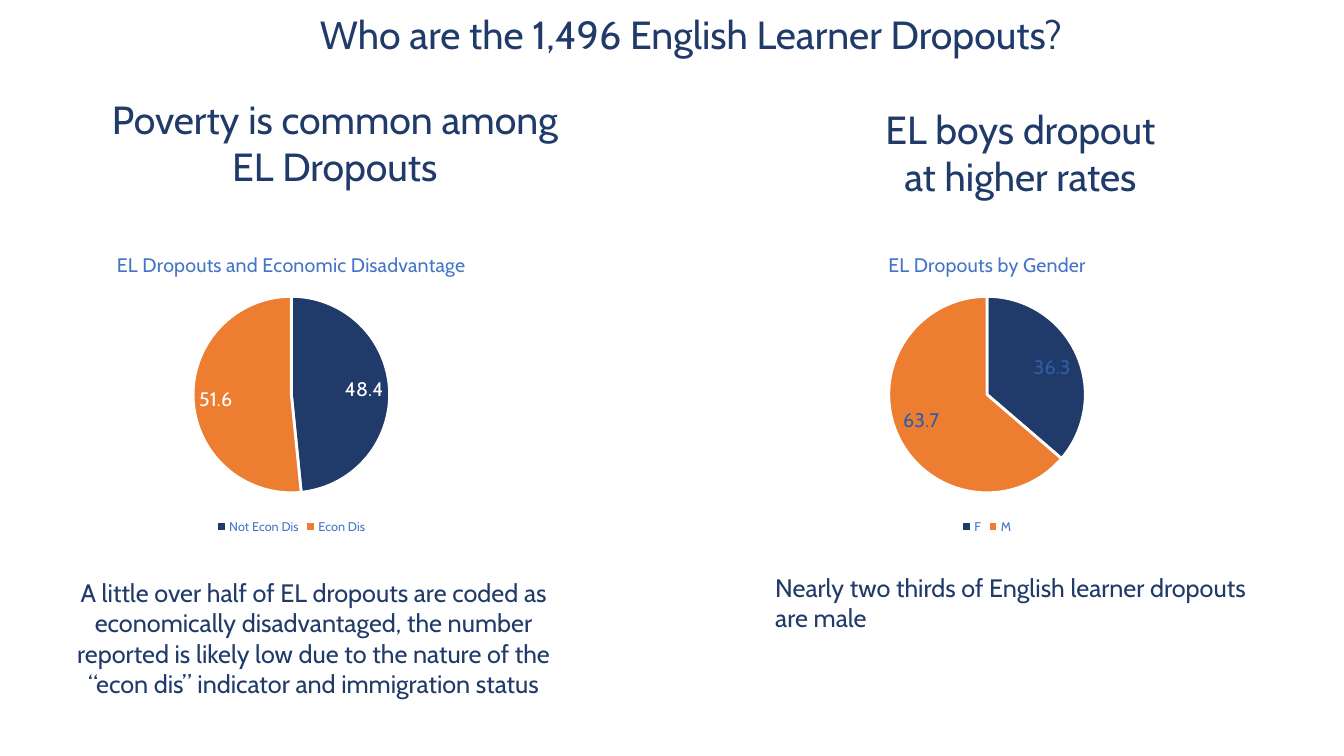
"""Build a slide on English learner dropouts with two captioned pie charts."""
from dataclasses import dataclass

import lxml.etree
import pptx
import pptx.chart.data
import pptx.dml.color
import pptx.enum.chart
import pptx.enum.text
import pptx.oxml.ns
import pptx.util

FONT = "Cabin"
COLORS = {"navy": "203B6A", "orange": "ED7D31", "blue": "4575C7",
          "deep_blue": "2F5DA8", "white": "FFFFFF"}
CENTER = pptx.enum.text.PP_ALIGN.CENTER
LEFT = pptx.enum.text.PP_ALIGN.LEFT


@dataclass
class Passage:
    text: str
    left: float
    top: float
    width: float
    height: float
    size: int
    align: pptx.enum.text.PP_ALIGN = CENTER


@dataclass
class Pie:
    title: str
    left: float
    shares: dict[str, float]
    label_color: str


PASSAGES = [
    Passage("Who are the 1,496 English Learner Dropouts?", 0.99, 0.05, 11.72, 0.57, 28),
    Passage("Poverty is common among EL Dropouts", 0.99, 0.9, 4.66, 1.04, 28),
    Passage("EL boys dropout\nat higher rates", 7.2, 1, 5.84, 1.04, 28),
    Passage("A little over half of EL dropouts are coded as economically "
            "disadvantaged, the number reported is likely low due to the nature of "
            "the “econ dis” indicator and immigration status",
            0.39, 5.68, 5.44, 1.31, 18),
    Passage("Nearly two thirds of English learner dropouts are male",
            7.59, 5.63, 5.05, 0.71, 18, LEFT),
]
PIES = [
    Pie("EL Dropouts and Economic Disadvantage", 0.39,
        {"Not Econ Dis": 48.4, "Econ Dis": 51.6}, "white"),
    Pie("EL Dropouts by Gender", 7.29, {"F": 36.3, "M": 63.7}, "deep_blue"),
]


def rgb(name: str) -> pptx.dml.color.RGBColor:
    """Return the named colour."""
    return pptx.dml.color.RGBColor.from_string(COLORS[name])


def style_font(font, size: int, color: str) -> None:
    """Apply the slide typeface with a size and colour."""
    font.name = FONT
    font.size = pptx.util.Pt(size)
    font.bold = False
    font.color.rgb = rgb(color)


def add_passage(slide, passage: Passage) -> None:
    """Add a wrapped text box."""
    box = slide.shapes.add_textbox(*map(pptx.util.Inches, (
        passage.left, passage.top, passage.width, passage.height)))
    frame = box.text_frame
    frame.word_wrap = True
    frame.text = passage.text
    for paragraph in frame.paragraphs:
        paragraph.alignment = passage.align
        for run in paragraph.runs:
            style_font(run.font, passage.size, "navy")


def place_plot(chart) -> None:
    """Fix the pie's position inside its chart frame."""
    plot_area = chart.plots[0]._element.getparent()
    qn = pptx.oxml.ns.qn
    layout = plot_area.find(qn("c:layout"))
    if layout is None:
        layout = lxml.etree.Element(qn("c:layout"))
        plot_area.insert(0, layout)
    manual = lxml.etree.SubElement(layout, qn("c:manualLayout"))
    for tag, value in (("layoutTarget", "inner"), ("xMode", "edge"), ("yMode", "edge"),
                       ("x", "0.305"), ("y", "0.2"), ("w", "0.39"), ("h", "0.65")):
        lxml.etree.SubElement(manual, qn(f"c:{tag}")).set("val", value)


def add_pie(slide, pie: Pie) -> None:
    """Add a titled pie chart with value labels and a legend."""
    chart_data = pptx.chart.data.CategoryChartData(number_format="0.0")
    chart_data.categories = list(pie.shares)
    chart_data.add_series("Series 1", list(pie.shares.values()))
    chart = slide.shapes.add_chart(
        pptx.enum.chart.XL_CHART_TYPE.PIE, pptx.util.Inches(pie.left),
        pptx.util.Inches(2.34), pptx.util.Inches(5), pptx.util.Inches(3), chart_data).chart
    style_font(chart.font, 10, "navy")

    chart.has_title = True
    chart.chart_title.include_in_layout = False
    chart.chart_title.text_frame.text = pie.title
    style_font(chart.chart_title.text_frame.paragraphs[0].runs[0].font, 14, "blue")

    chart.has_legend = True
    chart.legend.position = pptx.enum.chart.XL_LEGEND_POSITION.BOTTOM
    chart.legend.include_in_layout = False
    style_font(chart.legend.font, 9, "blue")

    plot = chart.plots[0]
    plot.vary_by_categories = True
    plot.has_data_labels = True
    labels = plot.data_labels
    labels.show_value = True
    labels.show_percentage = False
    labels.number_format = "0.0"
    labels.number_format_is_linked = False
    labels.position = pptx.enum.chart.XL_LABEL_POSITION.INSIDE_END
    style_font(labels.font, 14, pie.label_color)
    for index, color in enumerate(("navy", "orange")):
        slice_format = plot.series[0].points[index].format
        slice_format.fill.solid()
        slice_format.fill.fore_color.rgb = rgb(color)
        slice_format.line.color.rgb = rgb("white")
        slice_format.line.width = pptx.util.Pt(2)
    place_plot(chart)


def main() -> None:
    """Create and save the presentation."""
    deck = pptx.Presentation()
    deck.slide_width = pptx.util.Inches(13.33)
    deck.slide_height = pptx.util.Inches(7.5)
    slide = deck.slides.add_slide(deck.slide_layouts[6])
    for passage in PASSAGES:
        add_passage(slide, passage)
    for pie in PIES:
        add_pie(slide, pie)
    deck.save("out.pptx")


if __name__ == "__main__":
    main()
